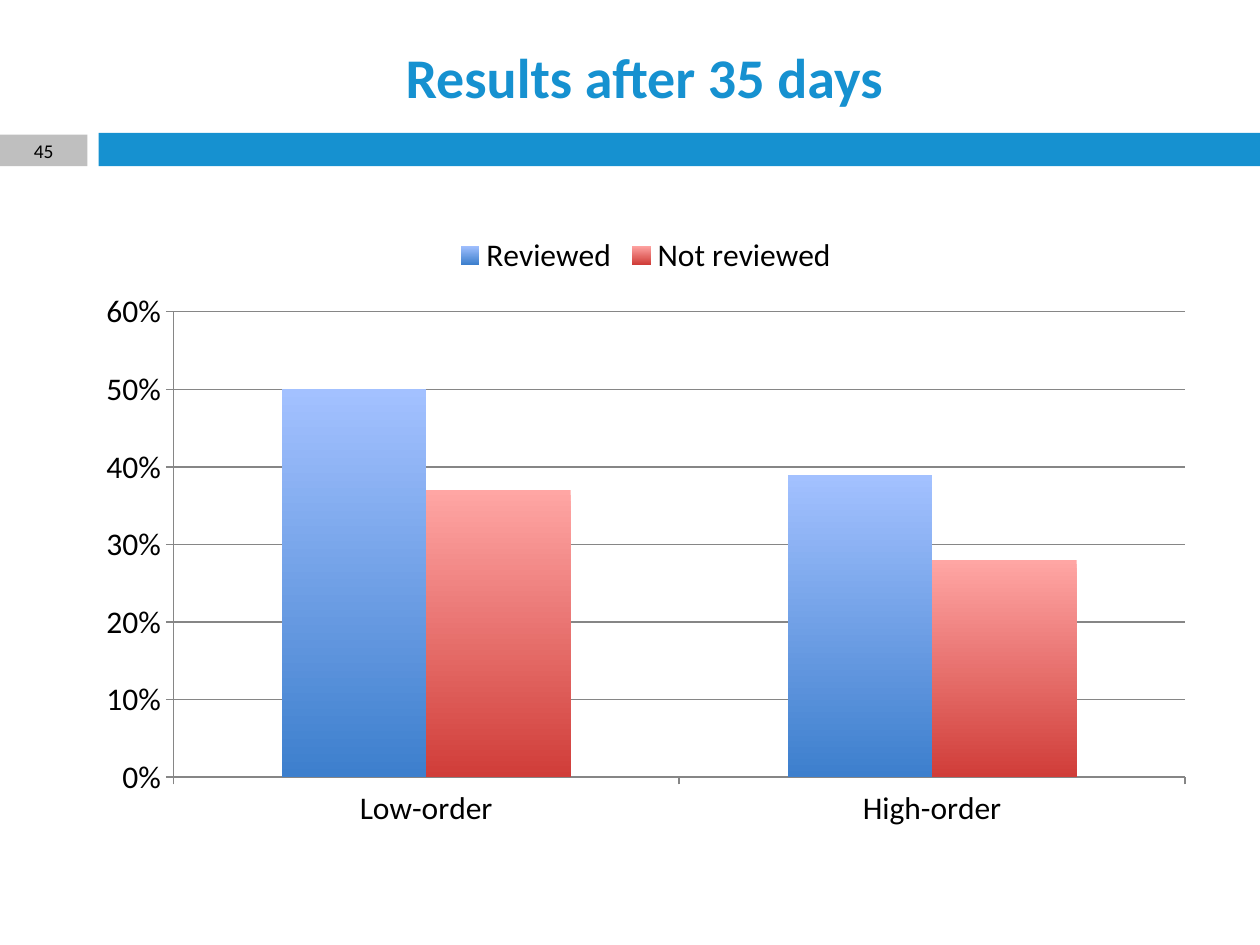
"""Build the slide showing review results after 35 days as a clustered column chart."""
import pptx
import pptx.chart.data
import pptx.dml.color
import pptx.enum.chart
import pptx.enum.shapes
import pptx.enum.text
import pptx.util

Pt = pptx.util.Pt
FONT = "Calibri"
BLUE, GREY, BLACK, LINE = "1691D0", "BFBFBF", "000000", "868686"

TITLE = "Results after 35 days"
PAGE_NUMBER = "45"
CATEGORIES = ["Low-order", "High-order"]
SERIES = [
    ("Reviewed", (0.5, 0.39), ("A3C1FF", "3D7FCD")),
    ("Not reviewed", (0.37, 0.28), ("FFA6A4", "D03D39")),
]

BAR_BOX = (56.4, 76, 663.6, 19)
NUMBER_BOX = (0, 77, 50, 18)
TITLE_BOX = (56.4, 19, 623.6, 49)
CHART_BOX = (48, 126, 642, 354)


def color(value):
    return pptx.dml.color.RGBColor.from_string(value)


def style_font(font, size, value, bold=False):
    font.name, font.size, font.bold = FONT, Pt(size), bold
    font.color.rgb = color(value)


def add_bar(page, bounds, fill):
    bar = page.shapes.add_shape(pptx.enum.shapes.MSO_SHAPE.RECTANGLE, *map(Pt, bounds))
    bar.shadow.inherit = False
    bar.fill.solid()
    bar.fill.fore_color.rgb = color(fill)
    bar.line.fill.background()


def add_label(page, bounds, text, size, value, bold=False):
    frame = page.shapes.add_textbox(*map(Pt, bounds)).text_frame
    frame.text = text
    frame.word_wrap = True
    frame.margin_top = frame.margin_bottom = 0
    frame.vertical_anchor = pptx.enum.text.MSO_ANCHOR.MIDDLE
    para = frame.paragraphs[0]
    para.alignment = pptx.enum.text.PP_ALIGN.CENTER
    style_font(para.runs[0].font, size, value, bold)


def style_line(line):
    line.color.rgb = color(LINE)
    line.width = Pt(0.75)


def add_results_chart(page):
    data = pptx.chart.data.CategoryChartData(number_format="0%")
    data.categories = CATEGORIES
    for name, values, _ in SERIES:
        data.add_series(name, values)
    kind = pptx.enum.chart.XL_CHART_TYPE.COLUMN_CLUSTERED
    chart = page.shapes.add_chart(kind, *map(Pt, CHART_BOX), data).chart
    style_font(chart.font, 18, BLACK)
    chart.has_title = False
    chart.has_legend = True
    chart.legend.position = pptx.enum.chart.XL_LEGEND_POSITION.TOP
    chart.legend.include_in_layout = False

    for axis in (chart.category_axis, chart.value_axis):
        axis.major_tick_mark = pptx.enum.chart.XL_TICK_MARK.OUTSIDE
        axis.minor_tick_mark = pptx.enum.chart.XL_TICK_MARK.NONE
        style_line(axis.format.line)
    scale = chart.value_axis
    scale.minimum_scale, scale.maximum_scale, scale.major_unit = 0, 0.6, 0.1
    scale.has_major_gridlines = True
    style_line(scale.major_gridlines.format.line)
    scale.tick_labels.number_format = "0%"
    scale.tick_labels.number_format_is_linked = False

    plot = chart.plots[0]
    plot.gap_width, plot.overlap, plot.vary_by_categories = 150, 0, False
    for series, (_, _, shades) in zip(plot.series, SERIES):
        fill = series.format.fill
        fill.gradient()
        fill.gradient_angle = 270
        for stop, shade in zip(fill.gradient_stops, shades):
            stop.color.rgb = color(shade)


def main():
    deck = pptx.Presentation()
    deck.slide_width, deck.slide_height = Pt(720), Pt(540)
    page = deck.slides.add_slide(deck.slide_layouts[6])
    add_bar(page, BAR_BOX, BLUE)
    add_bar(page, NUMBER_BOX, GREY)
    add_label(page, TITLE_BOX, TITLE, 32, BLUE, bold=True)
    add_label(page, NUMBER_BOX, PAGE_NUMBER, 11.1, BLACK)
    add_results_chart(page)
    deck.save("out.pptx")


if __name__ == "__main__":
    main()
